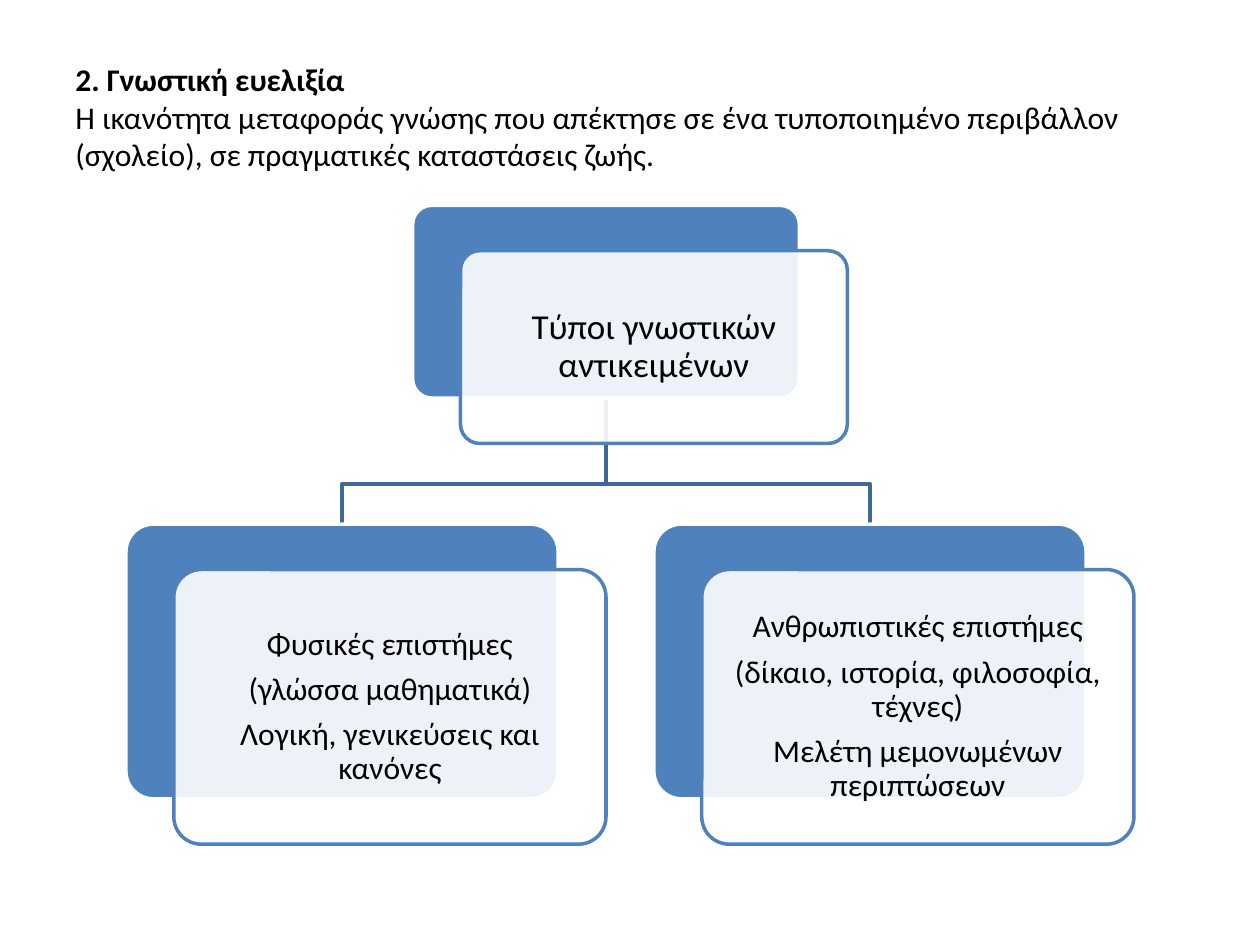
from collections import namedtuple

from pptx import Presentation
from pptx.dml.color import RGBColor
from pptx.enum.shapes import MSO_SHAPE
from pptx.enum.text import MSO_ANCHOR, PP_ALIGN
from pptx.oxml.ns import qn
from pptx.util import Inches, Pt
from lxml.etree import SubElement

Box = namedtuple("Box", "left top width height")

SLIDE_WIDTH, SLIDE_HEIGHT = 10, 7.5
SHIFT_X, SHIFT_Y = 0.38, 0.36
BLUE, DARK_BLUE, WHITE, BLACK = "4F81BD", "3F6797", "FFFFFF", "000000"

HEADING = "2. Γνωστική ευελιξία"
DEFINITION = (
    "Η ικανότητα μεταφοράς γνώσης που απέκτησε σε ένα τυποποιημένο περιβάλλον "
    "(σχολείο), σε πραγματικές καταστάσεις ζωής."
)
SUBJECT_TYPES = ["Τύποι γνωστικών αντικειμένων"]
SCIENCES = [
    ["Φυσικές επιστήμες", "(γλώσσα μαθηματικά)", "Λογική, γενικεύσεις και κανόνες"],
    [
        "Ανθρωπιστικές επιστήμες",
        "(δίκαιο, ιστορία, φιλοσοφία, τέχνες)",
        "Μελέτη μεμονωμένων περιπτώσεων",
    ],
]


def color(value):
    return RGBColor.from_string(value)


def apply(target, formats):
    for name, value in formats.items():
        setattr(target, name, value)


def emu(box):
    return [Inches(length) for length in box]


def style_run(run, size, bold=False):
    apply(run.font, {"name": "Calibri", "size": Pt(size), "bold": bold})
    run.font.color.rgb = color(BLACK)


def style_line(shape, line_color):
    shape.shadow.inherit = False
    shape.line.color.rgb = color(line_color)
    shape.line.width = Pt(2)


def add_title(slide, box):
    frame = slide.shapes.add_textbox(*emu(box)).text_frame
    apply(frame, {"word_wrap": True, "vertical_anchor": MSO_ANCHOR.MIDDLE})
    paragraph = frame.paragraphs[0]
    heading = paragraph.add_run()
    heading.text = HEADING
    style_run(heading, 18, True)
    paragraph.add_line_break()
    definition = paragraph.add_run()
    definition.text = DEFINITION
    style_run(definition, 18)


def add_panel(slide, box, fill, outline):
    panel = slide.shapes.add_shape(MSO_SHAPE.ROUNDED_RECTANGLE, *emu(box))
    panel.adjustments[0] = 0.1
    panel.fill.solid()
    panel.fill.fore_color.rgb = color(fill)
    style_line(panel, outline)
    return panel


def add_card(slide, box, lines, size, inset):
    add_panel(slide, box, BLUE, WHITE)
    shifted = box._replace(left=box.left + SHIFT_X, top=box.top + SHIFT_Y)
    front = add_panel(slide, shifted, WHITE, BLUE)
    fill_color = front.fill._xPr.find(qn("a:solidFill"))[0]
    SubElement(fill_color, qn("a:alpha")).set("val", "90000")
    frame = front.text_frame
    apply(frame, {"word_wrap": True, "vertical_anchor": MSO_ANCHOR.MIDDLE})
    margins = ("margin_left", "margin_top", "margin_right", "margin_bottom")
    apply(frame, dict.fromkeys(margins, Inches(inset)))
    for index, line in enumerate(lines):
        paragraph = frame.add_paragraph() if index else frame.paragraphs[0]
        apply(paragraph, {
            "alignment": PP_ALIGN.CENTER,
            "line_spacing": 0.9,
            "space_after": Pt(0.35 * size),
        })
        run = paragraph.add_run()
        run.text = line
        style_run(run, size)


def add_branch(slide, parent, child):
    start_x = Inches(parent.left + parent.width / 2)
    start_y = Inches(parent.top + parent.height)
    end_x = Inches(child.left + child.width / 2)
    end_y = Inches(child.top)
    bend_y = round(start_y + 0.68 * (end_y - start_y))
    builder = slide.shapes.build_freeform(start_x, start_y)
    builder.add_line_segments(
        [(start_x, bend_y), (end_x, bend_y), (end_x, end_y)], close=False
    )
    branch = builder.convert_to_shape()
    branch.fill.background()
    style_line(branch, DARK_BLUE)


def add_tree(slide, box):
    count = len(SCIENCES)
    child_width = (box.width - (2 * count - 1) * SHIFT_X) / count
    child_height = 0.43 * box.height
    child_top = box.top + box.height - SHIFT_Y - child_height
    children = [
        Box(box.left + column * (child_width + 2 * SHIFT_X),
            child_top, child_width, child_height)
        for column in range(count)
    ]
    root_width, root_height = 3.07, 1.53
    root_left = box.left + (box.width - SHIFT_X - root_width) / 2
    root = Box(root_left, box.top, root_width, root_height)
    for child in reversed(children):
        add_branch(slide, root, child)
    add_card(slide, root, SUBJECT_TYPES, 20, 0.08)
    for child, lines in zip(children, SCIENCES):
        add_card(slide, child, lines, 18, 0.07)


def main():
    presentation = Presentation()
    apply(presentation, {
        "slide_width": Inches(SLIDE_WIDTH),
        "slide_height": Inches(SLIDE_HEIGHT),
    })
    slide = presentation.slides.add_slide(presentation.slide_layouts[6])
    add_title(slide, Box(0.05 * SLIDE_WIDTH, 0.04 * SLIDE_HEIGHT, 0.9 * SLIDE_WIDTH, 1.25))
    add_tree(slide, Box(0.1 * SLIDE_WIDTH, 1.63, 0.8 * SLIDE_WIDTH, 5.07))
    presentation.save("out.pptx")


if __name__ == "__main__":
    main()
